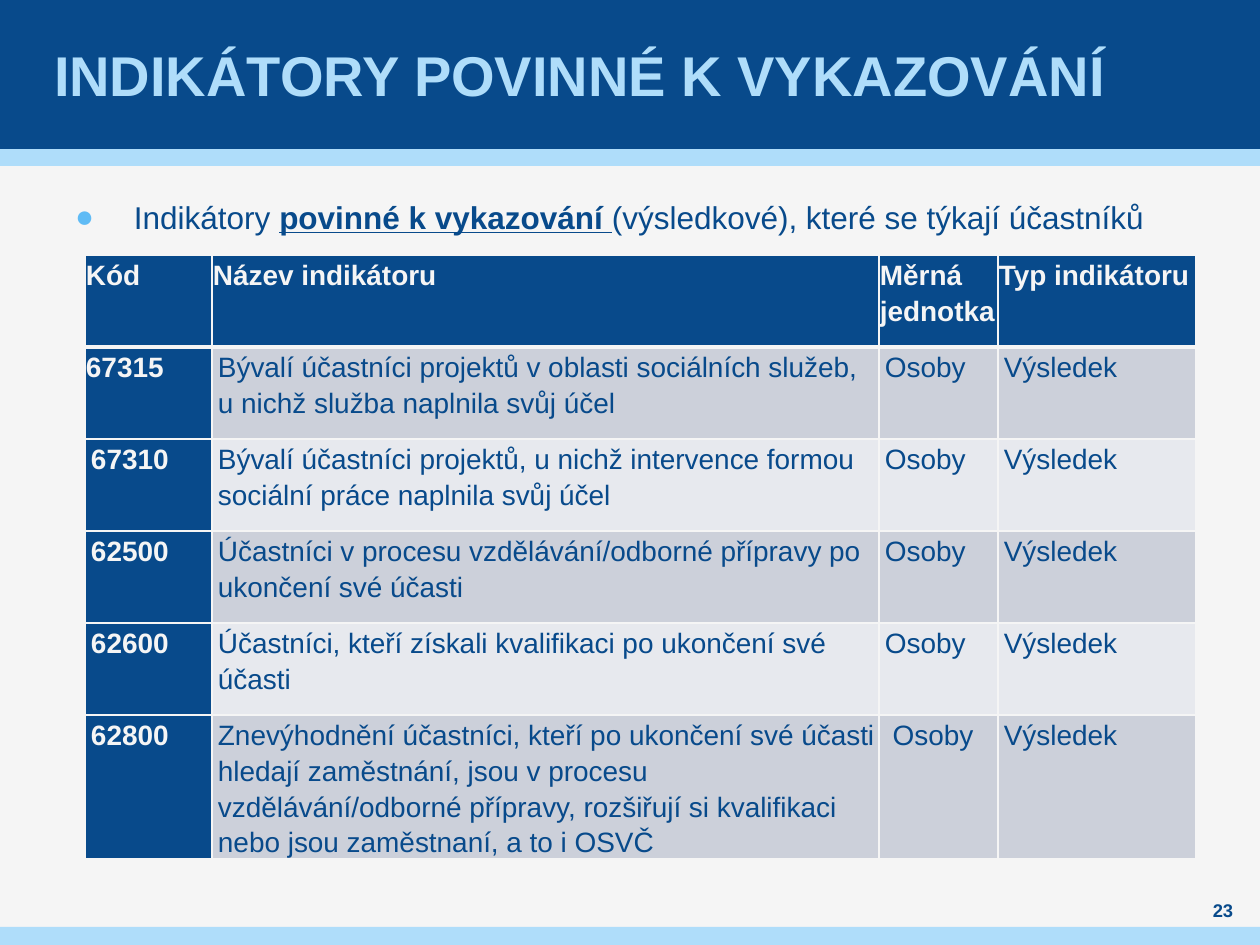
from lxml import etree
from pptx import Presentation
from pptx.dml.color import RGBColor
from pptx.enum import shapes, text
from pptx.oxml import ns
from pptx.util import Pt

NAVY = RGBColor(0x08, 0x4A, 0x8B)
SKY = RGBColor(0xAF, 0xDD, 0xFA)
BULLET = RGBColor(0x5F, 0xBB, 0xF5)
PAPER = RGBColor(0xF5, 0xF5, 0xF5)
BANDS = (RGBColor(0xCC, 0xD0, 0xDA), RGBColor(0xE7, 0xE9, 0xEE))
COLUMNS = (127, 667, 119, 198)
ROWS = (92, 92, 92, 92, 92, 126)
HEADER = ("Kód", "Název indikátoru", "Měrná jednotka", "Typ indikátoru")
INDICATORS = (
    ("67315", "Bývalí účastníci projektů v oblasti sociálních služeb, u nichž služba naplnila svůj účel", "Osoby"),
    ("67310", "Bývalí účastníci projektů, u nichž intervence formou sociální práce naplnila svůj účel", "Osoby"),
    ("62500", "Účastníci v procesu vzdělávání/odborné přípravy po ukončení své účasti", "Osoby"),
    ("62600", "Účastníci, kteří získali kvalifikaci po ukončení své účasti", "Osoby"),
    ("62800", "Znevýhodnění účastníci, kteří po ukončení své účasti hledají zaměstnání, jsou v procesu "
     "vzdělávání/odborné přípravy, rozšiřují si kvalifikaci nebo jsou zaměstnaní, a to i OSVČ", " Osoby"),
)


def px(value):
    return round(value * 914400 / 126)


class SlideBuilder:
    """Holds the slide style and draws each kind of element on the current slide."""

    font = "Arial"

    def __init__(self, presentation):
        self.slide = presentation.slides.add_slide(presentation.slide_layouts[1])
        self.slide.background.fill.solid()
        self.slide.background.fill.fore_color.rgb = PAPER

    def format_run(self, run, size, color, bold=False, underline=False):
        run.font.name = self.font
        run.font.size = Pt(size)
        run.font.color.rgb = color
        run.font.bold = bold
        run.font.underline = underline

    def space(self, paragraph, line, before, after):
        paragraph.line_spacing = line
        paragraph.space_before = Pt(before)
        paragraph.space_after = Pt(after)

    def place(self, shape, box, anchor, side=0):
        shape.left, shape.top, shape.width, shape.height = map(px, box)
        frame = shape.text_frame
        frame.word_wrap = True
        frame.auto_size = text.MSO_AUTO_SIZE.NONE
        frame.vertical_anchor = anchor
        frame.margin_left = frame.margin_right = px(side)
        frame.margin_top = frame.margin_bottom = 0
        return frame

    def bar(self, top, height):
        shape = self.slide.shapes.add_shape(shapes.MSO_SHAPE.RECTANGLE, 0, px(top), px(1260), px(height))
        shape.shadow.inherit = False
        shape.fill.solid()
        shape.fill.fore_color.rgb = SKY
        shape.line.fill.background()
        shape.element.getparent().insert(2, shape.element)
        return shape

    def title(self, wording, box):
        frame = self.place(self.slide.shapes.title, box, text.MSO_ANCHOR.MIDDLE, side=5)
        frame.text = wording
        frame.paragraphs[0].alignment = text.PP_ALIGN.LEFT
        self.format_run(frame.paragraphs[0].runs[0], 32, SKY, bold=True)

    def bullet(self, parts, box):
        frame = self.place(self.slide.placeholders[1], box, text.MSO_ANCHOR.TOP)
        paragraph = frame.paragraphs[0]
        paragraph.level = 1
        self.space(paragraph, Pt(28.8), 6, 6)
        for wording, strong in parts:
            run = paragraph.add_run()
            run.text = wording
            self.format_run(run, 18, NAVY, bold=strong, underline=strong)
        properties = paragraph.runs[0].font._element.getparent().getparent().get_or_add_pPr()
        properties.set("marL", str(px(59)))
        properties.set("indent", str(px(-59)))
        color = etree.SubElement(properties, ns.qn("a:buClr"))
        etree.SubElement(color, ns.qn("a:srgbClr"), val=str(BULLET))
        etree.SubElement(properties, ns.qn("a:buFont"), typeface=self.font)
        etree.SubElement(properties, ns.qn("a:buChar"), char="●")

    def page_number(self, wording, box):
        shape = self.slide.shapes.add_textbox(*map(px, box))
        frame = self.place(shape, box, text.MSO_ANCHOR.MIDDLE)
        frame.text = wording
        frame.paragraphs[0].alignment = text.PP_ALIGN.CENTER
        self.format_run(frame.paragraphs[0].runs[0], 10.5, NAVY, bold=True)

    def borders(self, cell, top, bottom):
        properties = cell._tc.get_or_add_tcPr()
        for side, width in (("L", 1), ("R", 1), ("T", top), ("B", bottom)):
            line = etree.SubElement(properties, ns.qn(f"a:ln{side}"), w=str(Pt(width)))
            fill = etree.SubElement(line, ns.qn("a:solidFill"))
            etree.SubElement(fill, ns.qn("a:srgbClr"), val=str(PAPER))

    def cell(self, cell, wording, row, column):
        heading = row == 0 or column == 0
        flush = row == 0 or (row, column) == (1, 0)
        self.borders(cell, top=3 if row == 1 else 1, bottom=3 if row == 0 else 1)
        cell.fill.solid()
        cell.fill.fore_color.rgb = NAVY if heading else BANDS[(row - 1) % 2]
        cell.margin_left = cell.margin_right = cell.margin_top = px(1)
        cell.margin_bottom = 0
        cell.text_frame.text = wording
        paragraph = cell.text_frame.paragraphs[0]
        self.space(paragraph, 1.15, 0 if flush else 3, 10 if flush else 3)
        if not flush:
            paragraph._p.get_or_add_pPr().set("marL", str(px(5)))
        self.format_run(paragraph.runs[0], 16, PAPER if heading else NAVY, bold=heading)

    def table(self, rows, left, top):
        frame = self.slide.shapes.add_table(
            len(ROWS), len(COLUMNS), px(left), px(top), px(sum(COLUMNS)), px(sum(ROWS)))
        table = frame.table
        for column, width in zip(table.columns, COLUMNS):
            column.width = px(width)
        for row, height in zip(table.rows, ROWS):
            row.height = px(height)
        for row, wordings in enumerate(rows):
            for column, wording in enumerate(wordings):
                self.cell(table.cell(row, column), wording, row, column)


def main():
    presentation = Presentation()
    presentation.slide_width, presentation.slide_height = px(1260), px(945)
    builder = SlideBuilder(presentation)
    builder.bar(927, 18)
    builder.bar(0, 149).fill.fore_color.rgb = NAVY
    builder.bar(149, 17)
    builder.title("INDIKÁTORY POVINNÉ K VYKAZOVÁNÍ", (49, 0, 1160, 149))
    builder.bullet((("Indikátory ", False), ("povinné k vykazování ", True),
                    ("(výsledkové), které se týkají účastníků", False)), (75, 185, 1111, 659))
    builder.page_number("23", (1191, 898, 64, 25))
    builder.table([HEADER] + [(*indicator, "Výsledek") for indicator in INDICATORS], 85, 255)
    presentation.save("out.pptx")


if __name__ == "__main__":
    main()
